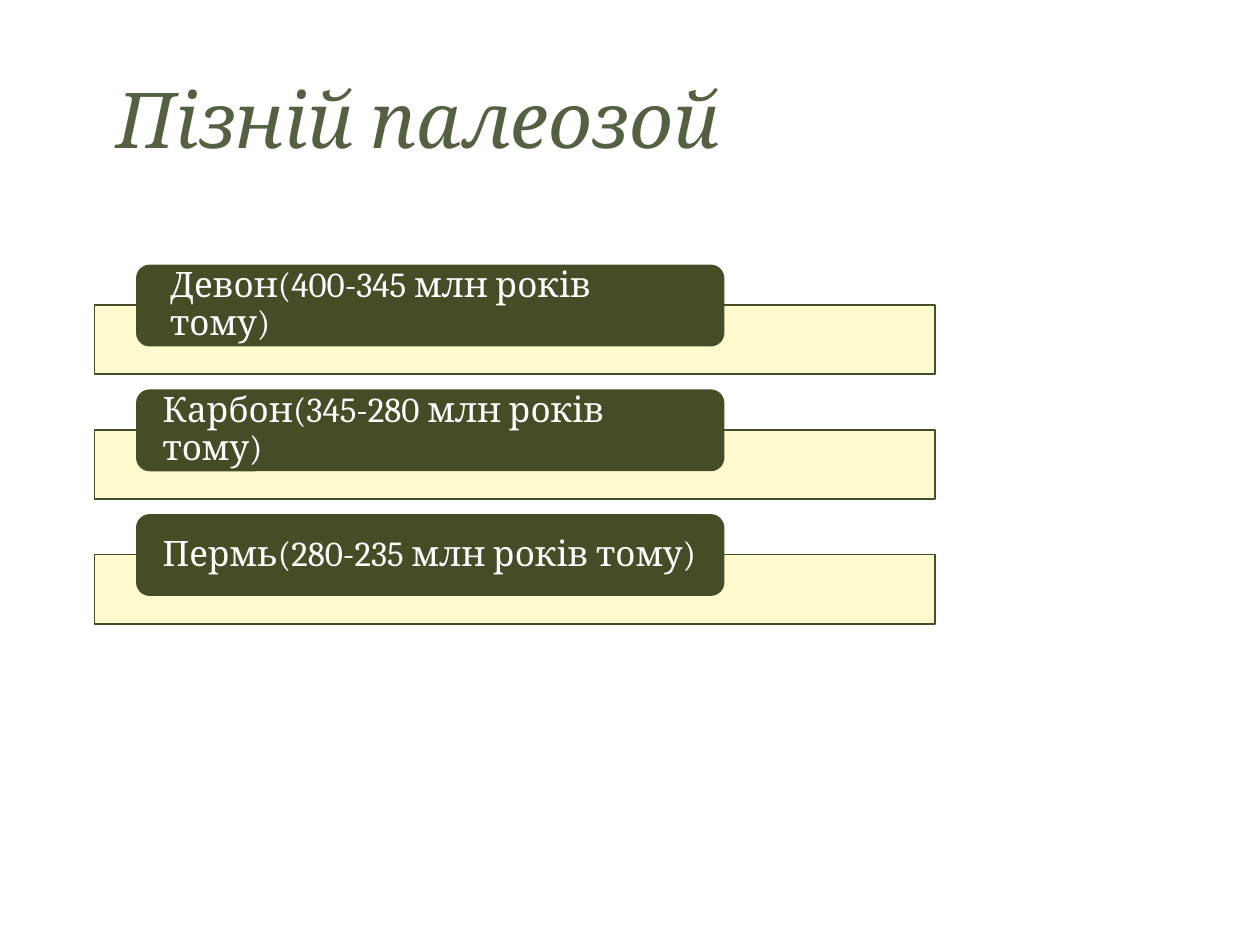
from dataclasses import dataclass

from lxml.etree import SubElement
from pptx import Presentation
from pptx.dml.color import RGBColor
from pptx.enum.shapes import MSO_SHAPE
from pptx.enum.text import MSO_ANCHOR, MSO_AUTO_SIZE, PP_ALIGN
from pptx.oxml.ns import qn
from pptx.util import Inches, Pt


@dataclass(frozen=True)
class Theme:
    font: str = "Cambria"
    title_color: str = "536142"
    dark: str = "444D26"
    cream: str = "FEFAC9"
    white: str = "FFFFFF"
    title_size: int = 44
    label_size: int = 20
    band_opacity: int = 90


def write_text(frame, text, *, font, size, color, italic=False, line_spacing=None):
    frame.word_wrap = True
    para = frame.paragraphs[0]
    para.alignment = PP_ALIGN.LEFT
    if line_spacing:
        para.line_spacing = line_spacing
    span = para.add_run()
    span.text = text
    span.font.name = font
    span.font.size = Pt(size)
    span.font.italic = italic
    span.font.color.rgb = RGBColor.from_string(color)


class SlideBuilder:
    def __init__(self, page, theme):
        self.page = page
        self.theme = theme

    def shape(self, kind, left, top, width, height, fill):
        box = self.page.shapes.add_shape(
            kind, Inches(left), Inches(top), Inches(width), Inches(height))
        box.shadow.inherit = False
        box.fill.solid()
        box.fill.fore_color.rgb = RGBColor.from_string(fill)
        return box

    def title(self, text, left, top, width, height):
        box = self.page.shapes.add_textbox(
            Inches(left), Inches(top), Inches(width), Inches(height))
        write_text(box.text_frame, text, font=self.theme.font, italic=True,
                   size=self.theme.title_size, color=self.theme.title_color)
        box.text_frame.auto_size = MSO_AUTO_SIZE.SHAPE_TO_FIT_TEXT

    def band(self, left, top, width, height):
        box = self.shape(MSO_SHAPE.RECTANGLE, left, top, width, height, self.theme.cream)
        box.line.color.rgb = RGBColor.from_string(self.theme.dark)
        box.line.width = Pt(1)
        # Slight transparency of the fill
        color = box.fill._xPr.find(qn("a:solidFill"))[0]
        SubElement(color, qn("a:alpha")).set("val", str(self.theme.band_opacity * 1000))

    def label(self, text, left, top, width, height, inset):
        box = self.shape(MSO_SHAPE.ROUNDED_RECTANGLE, left, top, width, height,
                         self.theme.dark)
        box.line.fill.background()
        frame = box.text_frame
        frame.margin_left, frame.margin_right = Inches(inset), Inches(0.18)
        frame.margin_top = frame.margin_bottom = 0
        frame.vertical_anchor = MSO_ANCHOR.MIDDLE
        write_text(frame, text, font=self.theme.font, size=self.theme.label_size,
                   color=self.theme.white, line_spacing=0.9)


def main():
    deck = Presentation()
    deck.slide_width, deck.slide_height = Inches(10), Inches(7.5)
    page = deck.slides.add_slide(deck.slide_layouts[6])
    builder = SlideBuilder(page, Theme())

    # Periods: each a wide band with a label over its top edge
    periods = [
        ("Девон(400-345 млн років тому)", 0.24),
        ("Карбон(345-280 млн років тому)", 0.18),
        ("Пермь(280-235 млн років тому)", 0.18),
    ]
    first_top, step = 2.1, 0.99
    for index, (text, inset) in enumerate(periods):
        top = first_top + index * step
        builder.band(0.75, top + 0.32, 6.67, 0.55)
        builder.label(text, 1.08, top, 4.67, 0.65, inset)

    # Title
    builder.title("Пізній палеозой", 0.83, 0.52, 6.77, 0.84)

    deck.save("out.pptx")


if __name__ == "__main__":
    main()
